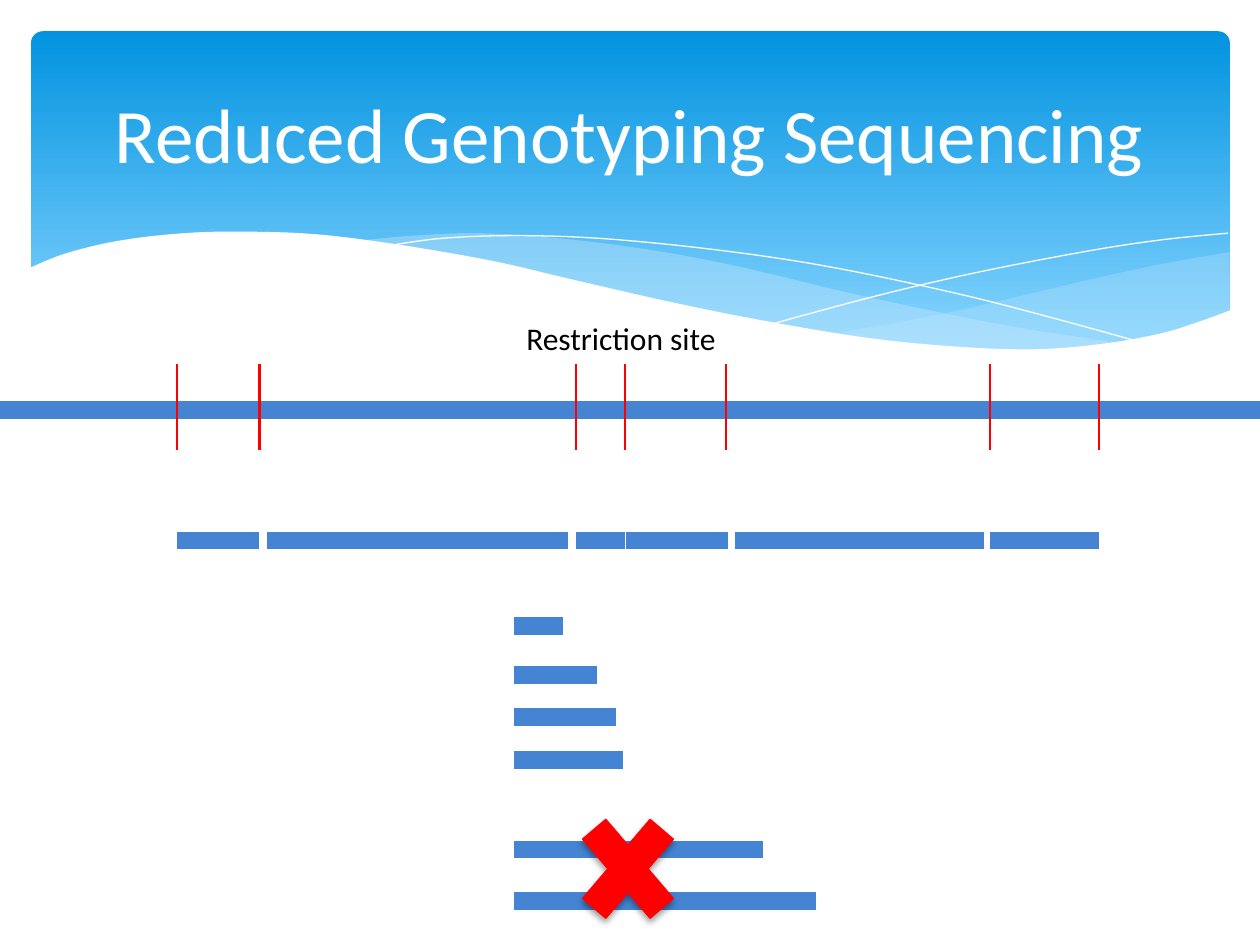
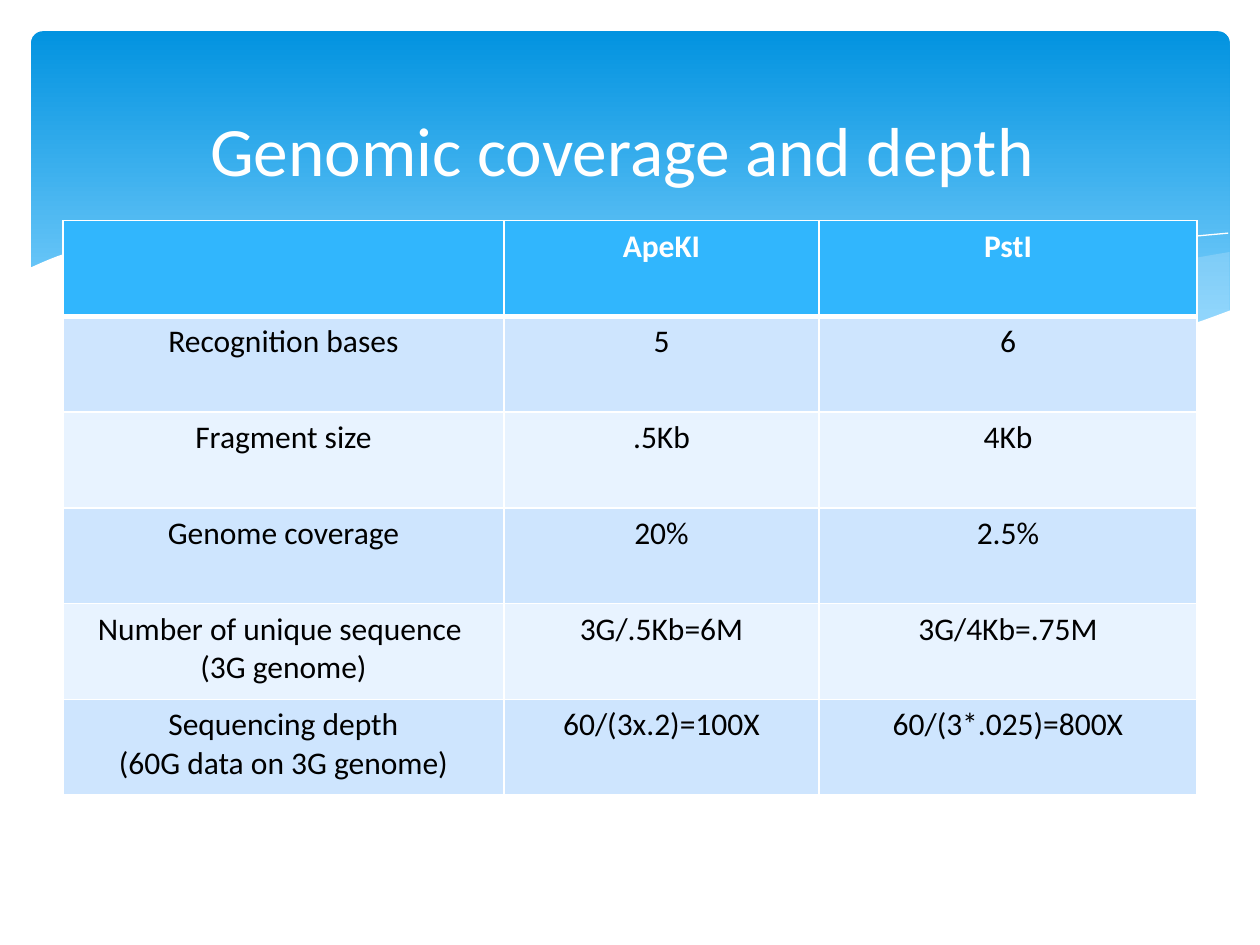
from lxml import etree
from pptx import Presentation
from pptx.dml.color import RGBColor
from pptx.enum.shapes import MSO_CONNECTOR, MSO_SHAPE
from pptx.enum.text import MSO_ANCHOR, PP_ALIGN
from pptx.oxml.ns import qn
from pptx.util import Cm, Pt

STRAIGHT = MSO_CONNECTOR.STRAIGHT
ROUNDED_RECTANGLE = MSO_SHAPE.ROUNDED_RECTANGLE
MULTIPLY = MSO_SHAPE.MATH_MULTIPLY
MIDDLE = MSO_ANCHOR.MIDDLE
TOP = MSO_ANCHOR.TOP
CENTER = PP_ALIGN.CENTER
LEFT = PP_ALIGN.LEFT

WHITE = RGBColor(0xFF, 0xFF, 0xFF)
BLACK = RGBColor(0x00, 0x00, 0x00)
RED = RGBColor(0xFF, 0x00, 0x00)
BAND_TOP = RGBColor(0x02, 0x93, 0xE0)
BAND_BOTTOM = RGBColor(0x83, 0xD3, 0xFE)
PALE_WAVE = RGBColor(0xC6, 0xE7, 0xFC)
DNA_BLUE = RGBColor(0x45, 0x84, 0xD3)
HEADER_BLUE = RGBColor(0x31, 0xB6, 0xFD)
ROW_DARK = RGBColor(0xCE, 0xE5, 0xFE)
ROW_LIGHT = RGBColor(0xE8, 0xF3, 0xFF)
FONT = "Calibri"

# All positions and lengths below are centimetres.
SLIDE_WIDTH, SLIDE_HEIGHT = 25.4, 19.05

# Each wave: its smooth edges, and its opacity in percent.
RIGHT_WAVE = ([
    [(16.79, 6.73), (19.13, 6.3), (21.87, 5.66), (23.39, 5.33), (24.79, 5.08)],
    [(24.79, 6.27), (23.75, 6.65), (22.58, 6.91), (21.69, 7.01), (20.4, 7.06),
     (18.92, 6.99), (16.79, 6.73)],
], 29)
MIDDLE_WAVE = ([
    [(7.26, 4.85), (8.33, 4.75), (9.65, 4.7), (11.23, 4.8), (13.06, 5.03),
     (14.83, 5.36), (16.97, 5.87), (18.82, 6.27), (20.5, 6.6), (22.68, 6.93)],
    [(22.68, 6.93), (21.77, 7.04), (20.5, 7.06), (19, 7.01), (17.27, 6.81),
     (15.27, 6.48), (13.46, 6.1), (11.4, 5.64), (9.73, 5.26), (8.2, 4.98),
     (7.26, 4.85)],
], 40)
WAVE_LINES = [
    [(7.85, 4.95), (8.97, 4.8), (10.57, 4.75), (12.42, 4.83), (14.78, 5.08),
     (16.89, 5.41), (19.3, 5.92), (21.11, 6.38), (23.04, 6.91)],
    [(15.57, 6.53), (17.65, 5.97), (19.71, 5.49), (22, 5.05), (23.47, 4.83),
     (24.76, 4.7)],
]
WHITE_WAVE = [
    [(0.58, 5.41), (1.32, 5.11), (2.41, 4.85), (3.71, 4.7), (4.9, 4.67),
     (6.35, 4.72), (8.03, 4.93), (9.93, 5.26), (11.35, 5.59), (13.44, 6.07),
     (15.32, 6.45), (17.48, 6.81), (19.33, 6.99), (20.9, 7.04), (22.23, 6.93),
     (23.37, 6.73), (24.13, 6.5), (24.82, 6.25)],
    [(24.82, 8.36), (0.58, 8.36)],
]

GENOME_Y = 8.26
RESTRICTION_SITES = [3.56, 5.23, 11.61, 12.6, 14.63, 19.96, 22.15]
SITE_TOP, SITE_BOTTOM = 7.34, 9.07
FRAGMENTS = [(3.56, 5.23), (5.38, 11.46), (11.61, 12.6), (12.62, 14.68),
             (14.81, 19.84), (19.96, 22.15)]
FRAGMENTS_Y = 10.9
SORTED_LEFT = 10.36
SORTED_Y = [12.62, 13.61, 14.45, 15.32, 17.12, 18.16]

COLUMN_WIDTHS = [8.89, 6.35, 7.62]
ROW_HEIGHT = 1.93
COVERAGE_ROWS = [
    ("", "ApeKI", "PstI"),
    ("Recognition bases", "5", "6"),
    ("Fragment size", ".5Kb", "4Kb"),
    ("Genome coverage", "20%", "2.5%"),
    ("Number of unique sequence \n(3G genome)", "3G/.5Kb=6M", "3G/4Kb=.75M"),
    ("Sequencing depth\n(60G data on 3G genome)", "60/(3x.2)=100X",
     "60/(3*.025)=800X"),
]


def smooth(knots, steps=6):
    """Points of a Catmull-Rom curve through the knots."""
    padded = [knots[0], *knots, knots[-1]]
    points = [knots[0]]
    for a, b, c, d in zip(padded, padded[1:], padded[2:], padded[3:]):
        for step in range(1, steps + 1):
            t = step / steps
            points.append(tuple(
                (2 * q + (r - p) * t + (2 * p - 5 * q + 4 * r - s) * t ** 2
                 + (3 * q - p - 3 * r + s) * t ** 3) / 2
                for p, q, r, s in zip(a, b, c, d)))
    return points


def add_curve(slide, edges, close=True):
    points = [(Cm(x), Cm(y)) for edge in edges for x, y in smooth(edge)]
    builder = slide.shapes.build_freeform(*points[0])
    builder.add_line_segments(points[1:], close=close)
    shape = builder.convert_to_shape()
    shape.shadow.inherit = False
    return shape


def fill_plain(shape, color, opacity=100):
    shape.fill.solid()
    shape.fill.fore_color.rgb = color
    shape.line.fill.background()
    if opacity < 100:
        color_element = shape._element.spPr.find(qn("a:solidFill"))[0]
        etree.SubElement(color_element, qn("a:alpha"), val=str(opacity * 1000))


def add_line(slide, start, end, color, width):
    line = slide.shapes.add_connector(STRAIGHT, *map(Cm, start + end))
    line.line.color.rgb = color
    line.line.width = Pt(width)
    etree.SubElement(line._element.spPr, qn("a:effectLst"))


def write_text(text_frame, text, size, color, alignment, bold=False):
    text_frame.text = text
    for paragraph in text_frame.paragraphs:
        paragraph.alignment = alignment
        for run in paragraph.runs:
            run.font.name = FONT
            run.font.size = Pt(size)
            run.font.bold = bold
            run.font.color.rgb = color


def add_text(slide, box, text, size, color, alignment, anchor, wrap):
    text_frame = slide.shapes.add_textbox(*map(Cm, box)).text_frame
    text_frame.word_wrap = wrap
    text_frame.vertical_anchor = anchor
    write_text(text_frame, text, size, color, alignment)


def add_titled_slide(presentation, title, size, top, height):
    """Blank slide with the gradient band, its waves and a title."""
    slide = presentation.slides.add_slide(presentation.slide_layouts[6])
    band = slide.shapes.add_shape(ROUNDED_RECTANGLE, Cm(0.63), Cm(0.63), Cm(24.16), Cm(6.86))
    band.adjustments[0] = 0.034
    band.shadow.inherit = False
    band.line.fill.background()
    band.fill.gradient()
    band.fill.gradient_angle = 270
    first_stop, last_stop = band.fill.gradient_stops
    first_stop.color.rgb, first_stop.position = BAND_TOP, 0
    last_stop.color.rgb, last_stop.position = BAND_BOTTOM, 0.9

    for edges, opacity in (RIGHT_WAVE, MIDDLE_WAVE):
        fill_plain(add_curve(slide, edges), PALE_WAVE, opacity)
    for knots in WAVE_LINES:
        curve = add_curve(slide, [knots], close=False)
        curve.fill.background()
        curve.line.color.rgb = WHITE
        curve.line.width = Pt(0)
    fill_plain(add_curve(slide, WHITE_WAVE), WHITE)
    add_text(slide, (1.27, top, 22.86, height), title, size, WHITE, CENTER, MIDDLE, True)
    return slide


def add_rejection_cross(slide):
    cross = slide.shapes.add_shape(MULTIPLY, Cm(11.35), Cm(15.98), Cm(2.62), Cm(3.07))
    cross.fill.solid()
    cross.fill.fore_color.rgb = RED
    cross.line.color.rgb = RED
    cross.line.width = Pt(0.75)
    cross.shadow.inherit = False
    effects = cross._element.spPr.find(qn("a:effectLst"))
    shadow = etree.SubElement(effects, qn("a:outerShdw"), blurRad=str(Pt(4)),
                              dist=str(Pt(2)), dir="5400000", rotWithShape="0")
    color = etree.SubElement(shadow, qn("a:srgbClr"), val=str(BLACK))
    etree.SubElement(color, qn("a:alpha"), val="38000")


def build_sequencing_slide(presentation):
    slide = add_titled_slide(presentation, "Reduced Genotyping Sequencing", 44, 0.94, 3.48)
    bars = [(0, SLIDE_WIDTH, GENOME_Y)]
    bars += [(left, right, FRAGMENTS_Y) for left, right in FRAGMENTS]
    lengths = sorted(right - left for left, right in FRAGMENTS)
    bars += [(SORTED_LEFT, SORTED_LEFT + length, y) for length, y in zip(lengths, SORTED_Y)]
    for left, right, y in bars:
        add_line(slide, (left, y), (right, y), DNA_BLUE, 10)
    for x in RESTRICTION_SITES:
        add_line(slide, (x, SITE_TOP), (x, SITE_BOTTOM), RED, 1.25)
    add_rejection_cross(slide)
    add_text(slide, (10.36, 6.3, 4.57, 1.02), "Restriction site", 18, BLACK, LEFT, TOP, False)


def set_borders(cell, bottom_width, top_width):
    """Insert white borders ahead of the cell's fill."""
    properties = cell._tc.get_or_add_tcPr()
    widths = {"a:lnL": 1, "a:lnR": 1, "a:lnT": top_width, "a:lnB": bottom_width}
    for position, (tag, width) in enumerate(widths.items()):
        border = etree.Element(qn(tag), w=str(Pt(width)))
        fill = etree.SubElement(border, qn("a:solidFill"))
        etree.SubElement(fill, qn("a:srgbClr"), val=str(WHITE))
        properties.insert(position, border)


def build_coverage_slide(presentation):
    slide = add_titled_slide(presentation, "Genomic coverage and depth ", 39.6, 1.96, 2.06)
    table = slide.shapes.add_table(
        len(COVERAGE_ROWS), len(COLUMN_WIDTHS), Cm(1.27), Cm(4.45),
        Cm(sum(COLUMN_WIDTHS)), Cm(ROW_HEIGHT * len(COVERAGE_ROWS))).table
    for column, width in zip(table.columns, COLUMN_WIDTHS):
        column.width = Cm(width)
    for row_index, texts in enumerate(COVERAGE_ROWS):
        table.rows[row_index].height = Cm(ROW_HEIGHT)
        is_header = row_index == 0
        row_color = HEADER_BLUE if is_header else (ROW_LIGHT, ROW_DARK)[row_index % 2]
        for column_index, text in enumerate(texts):
            cell = table.cell(row_index, column_index)
            cell.fill.solid()
            cell.fill.fore_color.rgb = row_color
            set_borders(cell, 3 if is_header else 1, 3 if row_index == 1 else 1)
            write_text(cell.text_frame, text, 18, WHITE if is_header else BLACK,
                       CENTER, is_header)


def main():
    presentation = Presentation()
    presentation.slide_width = Cm(SLIDE_WIDTH)
    presentation.slide_height = Cm(SLIDE_HEIGHT)
    build_sequencing_slide(presentation)
    build_coverage_slide(presentation)
    presentation.save("out.pptx")


if __name__ == "__main__":
    main()
